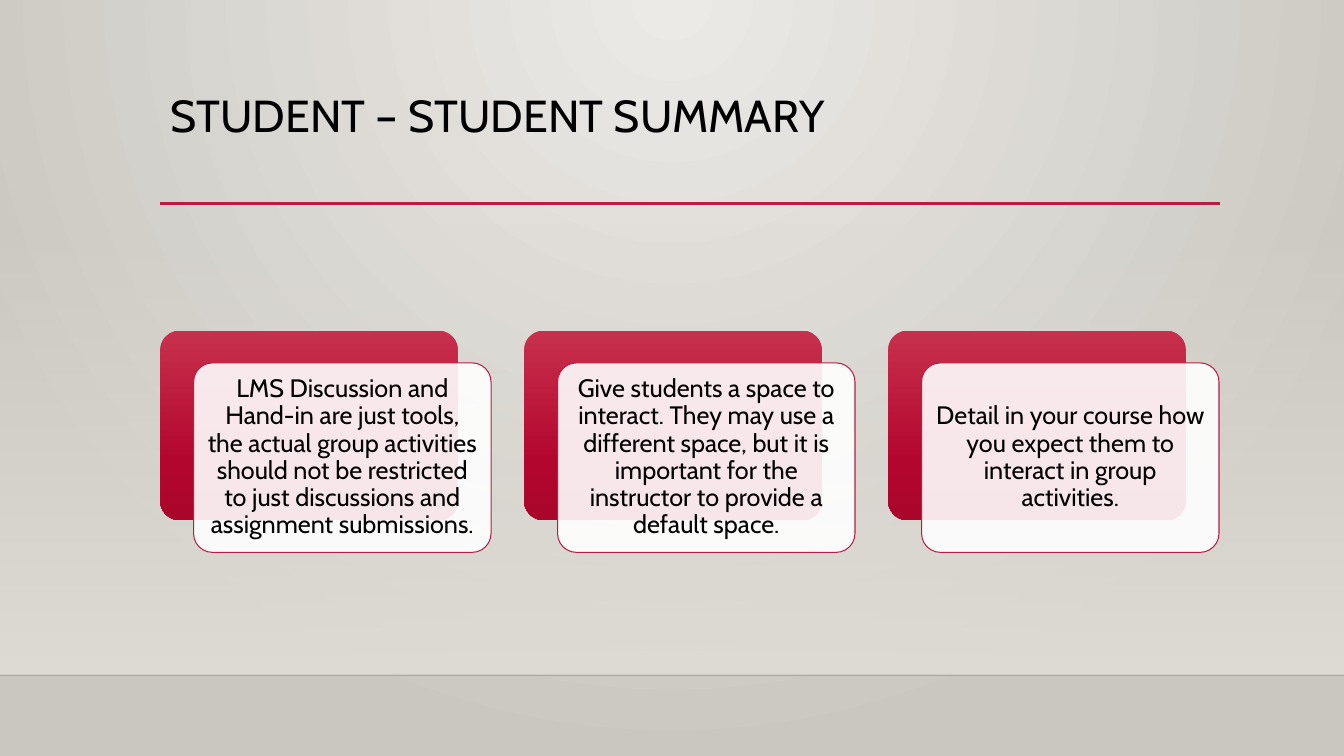
from lxml import etree
from pptx import Presentation
from pptx.dml.color import RGBColor
from pptx.enum import shapes, text
from pptx.oxml.ns import qn
from pptx.util import Inches, Pt

FONT = "Cabin"
BLACK = "000000"
CRIMSON = "B71E42"
CARD_WIDTH, CARD_HEIGHT = 2.95, 1.88
FIRST_LEFT, CARD_TOP, CARD_PITCH = 1.59, 3.28, 3.61
CARD_SHIFT_X, CARD_SHIFT_Y = 0.33, 0.32
CARD_TEXTS = [
    "LMS Discussion and Hand-in are just tools, the actual group activities "
    "should not be restricted to just discussions and assignment submissions.",
    "Give students a space to interact. They may use a different space, but it "
    "is important for the instructor to provide a default space.",
    "Detail in your course how you expect them to interact in group activities.",
]


def color(value):
    """Turn a hex string into a colour."""
    return RGBColor.from_string(value)


def set_alpha(properties, percent):
    """Set the opacity of the first colour found in the properties."""
    first_color = next(properties.iter(qn("a:srgbClr")))
    etree.SubElement(first_color, qn("a:alpha")).set("val", str(percent * 1000))


def set_gradient(fill, properties, stops, focus=None):
    """Fill with (position, colour, opacity) stops, downwards or around a focus."""
    fill.solid()
    gradient = etree.Element(qn("a:gradFill"), rotWithShape="1")
    stop_list = etree.SubElement(gradient, qn("a:gsLst"))
    for position, value, opacity in stops:
        stop = etree.SubElement(stop_list, qn("a:gs"), pos=str(position * 1000))
        etree.SubElement(stop, qn("a:srgbClr"), val=value)
        if opacity < 100:
            set_alpha(stop, opacity)
    if focus:
        circle = etree.SubElement(gradient, qn("a:path"), path="circle")
        sides = {side: str(share * 1000) for side, share in zip("ltrb", focus)}
        etree.SubElement(circle, qn("a:fillToRect"), **sides)
    else:
        etree.SubElement(gradient, qn("a:lin"), ang="5400000", scaled="0")
    properties.replace(properties.find(qn("a:solidFill")), gradient)


def add_box(page, kind, left, top, width, height):
    """Add a preset shape without outline or shadow."""
    box = page.shapes.add_shape(
        kind, Inches(left), Inches(top), Inches(width), Inches(height))
    box.shadow.inherit = False
    box.line.fill.background()
    return box


def add_rule(page, left, right, top, value, width, opacity=100):
    """Add a horizontal line."""
    rule = page.shapes.add_connector(
        shapes.MSO_CONNECTOR.STRAIGHT,
        Inches(left), Inches(top), Inches(right), Inches(top))
    rule.line.color.rgb = color(value)
    rule.line.width = Pt(width)
    properties = rule._element.spPr
    if opacity < 100:
        set_alpha(properties, opacity)
    etree.SubElement(properties, qn("a:effectLst"))


def write(box, words, size, alignment, anchor):
    """Write one paragraph into a shape."""
    frame = box.text_frame
    frame.text = words
    frame.word_wrap = True
    frame.auto_size = text.MSO_AUTO_SIZE.NONE
    frame.vertical_anchor = anchor
    para = frame.paragraphs[0]
    para.alignment = alignment
    para.line_spacing = 0.9
    span = para.runs[0]
    span.font.name = FONT
    span.font.size = Pt(size)
    span.font.color.rgb = color(BLACK)


def add_title(page, words):
    """Place and format the title placeholder."""
    title = page.shapes.title
    title.left, title.top = Inches(1.59), Inches(0.88)
    title.width, title.height = Inches(10.5), Inches(1.15)
    write(title, words, 32, text.PP_ALIGN.LEFT, text.MSO_ANCHOR.TOP)


def add_card(page, left, words):
    """Add a crimson plate with a white text card in front of it."""
    rounded = shapes.MSO_SHAPE.ROUNDED_RECTANGLE
    plate = add_box(page, rounded, left, CARD_TOP, CARD_WIDTH, CARD_HEIGHT)
    card = add_box(page, rounded, left + CARD_SHIFT_X, CARD_TOP + CARD_SHIFT_Y,
                   CARD_WIDTH, CARD_HEIGHT)
    plate.adjustments[0] = card.adjustments[0] = 0.1
    set_gradient(plate.fill, plate._element.spPr,
                 [(0, "C7304C", 100), (69, "B3062F", 100), (100, "AA062C", 100)])
    card.fill.solid()
    card.fill.fore_color.rgb = color("FFFFFF")
    set_alpha(card._element.spPr, 90)
    card.line.color.rgb = color(CRIMSON)
    card.line.width = Pt(0.75)
    frame = card.text_frame
    frame.margin_left = frame.margin_right = Inches(0.07)
    frame.margin_top = frame.margin_bottom = Inches(0.07)
    write(card, words, 18, text.PP_ALIGN.CENTER, text.MSO_ANCHOR.MIDDLE)


def add_backdrop(page):
    """Paint the background, the fading wall and the floor line."""
    fill = page.background.fill
    fill.solid()
    properties = page._element.find(".//" + qn("p:bgPr"))
    set_gradient(fill, properties, [(0, "ECEAE7", 100), (100, "CAC7C1", 100)],
                 focus=(43, 0, 43, 100))
    wall = add_box(page, shapes.MSO_SHAPE.RECTANGLE, 0, 2.21, 13.33, 4.49)
    set_gradient(wall.fill, wall._element.spPr,
                 [(0, "DFDBD5", 0), (100, "DFDBD5", 100)])
    add_rule(page, 0, 13.33, 6.7, "000001", 1, opacity=20)


def main():
    """Build the slide and save it."""
    deck = Presentation()
    deck.slide_width, deck.slide_height = Inches(13.33), Inches(7.5)
    page = deck.slides.add_slide(deck.slide_layouts.get_by_name("Title Only"))
    add_backdrop(page)
    add_rule(page, 1.59, 12.1, 2.02, CRIMSON, 2.5)
    add_title(page, "STUDENT – STUDENT SUMMARY")
    for index, words in enumerate(CARD_TEXTS):
        add_card(page, FIRST_LEFT + index * CARD_PITCH, words)
    deck.save("out.pptx")


if __name__ == "__main__":
    main()
